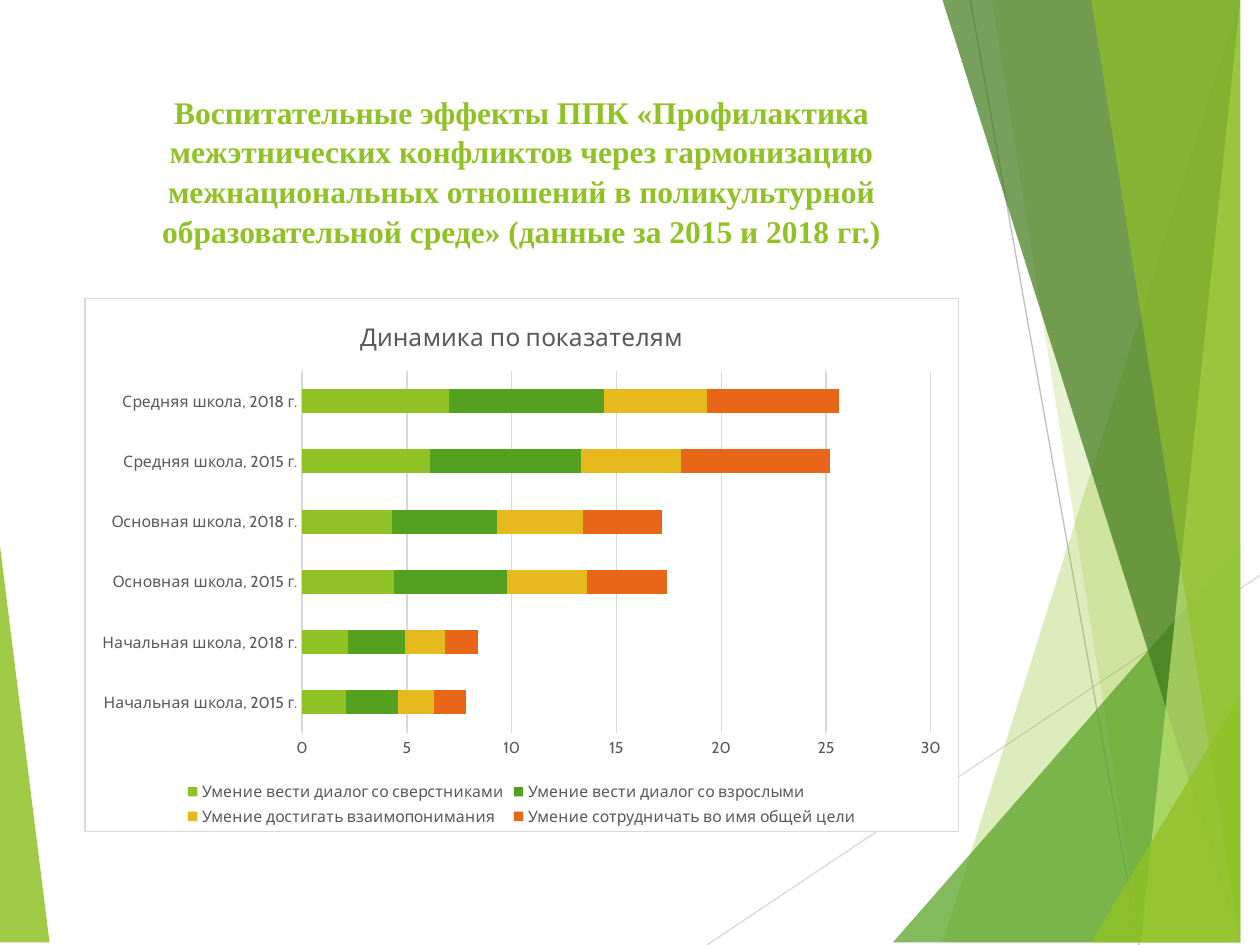
from lxml import etree
from pptx import Presentation
from pptx.chart import data
from pptx.dml.color import RGBColor
from pptx.enum import chart as ch, shapes, text
from pptx.oxml import ns, parse_xml
from pptx.util import Cm, Pt

WIDE, HIGH = 25.4, 19.05
LIME = RGBColor(0x90, 0xC2, 0x26)
GREEN = RGBColor(0x54, 0xA0, 0x21)
DARK = RGBColor(0x3F, 0x78, 0x19)
PALE = RGBColor(0xC0, 0xE4, 0x74)
GOLD = RGBColor(0xE6, 0xB9, 0x1E)
ORANGE = RGBColor(0xE7, 0x66, 0x18)
WHITE = RGBColor(0xFF, 0xFF, 0xFF)
INK = RGBColor(0x59, 0x59, 0x59)
RULE = RGBColor(0xD9, 0xD9, 0xD9)
GREY = RGBColor(0xBF, 0xBF, 0xBF)

TITLE = ("Воспитательные эффекты ППК «Профилактика межэтнических конфликтов "
         "через гармонизацию межнациональных отношений в поликультурной "
         "образовательной среде» (данные за 2015 и 2018 гг.)")
SCHOOLS = ["Начальная школа", "Основная школа", "Средняя школа"]
YEARS = [2015, 2018]
SKILLS = [
    ("Умение вести диалог со сверстниками", LIME, (2.1, 2.2, 4.4, 4.3, 6.1, 7)),
    ("Умение вести диалог со взрослыми", GREEN, (2.5, 2.7, 5.4, 5, 7.2, 7.4)),
    ("Умение достигать взаимопонимания", GOLD, (1.7, 1.9, 3.8, 4.1, 4.8, 4.9)),
    ("Умение сотрудничать во имя общей цели", ORANGE, (1.5, 1.6, 3.8, 3.8, 7.1, 6.3)),
]


def add_facet(slide, box, points, color, alpha):
    """Draw a see-through polygon; points are in cm from the box corner."""
    left, top = box[:2]
    spots = [(left + x, top + y) for x, y in points]
    pen = slide.shapes.build_freeform(*spots[0], scale=Cm(1))
    pen.add_line_segments(spots[1:], close=True)
    facet = pen.convert_to_shape()
    facet.shadow.inherit = False
    facet.line.fill.background()
    facet.fill.solid()
    facet.fill.fore_color.rgb = color
    tint = facet.fill._xPr.find(".//" + ns.qn("a:srgbClr"))
    etree.SubElement(tint, ns.qn("a:alpha"), val=str(alpha * 1000))


def add_line(slide, box, start, end, color):
    left, top = box[:2]
    line = slide.shapes.add_connector(
        shapes.MSO_CONNECTOR.STRAIGHT, Cm(left + start[0]), Cm(top + start[1]),
        Cm(left + end[0]), Cm(top + end[1]))
    line.line.color.rgb = color
    line.line.width = Pt(0.75)
    etree.SubElement(line._element.spPr, ns.qn("a:effectLst"))


def add_decor(slide, box):
    wide, high = box[2:]

    def band(top, foot, color, alpha):
        """A facet from the top edge to the foot, filled out to the right edge."""
        add_facet(slide, box, [(top, 0), (foot, high), (wide, high), (wide, 0)],
                  color, alpha)

    def wedge(foot, rise, color, alpha):
        """A triangle in the bottom right corner."""
        add_facet(slide, box, [(foot, high), (wide, rise), (wide, high)], color, alpha)

    add_facet(slide, box, [(0, 11.15), (1.24, high), (0, high)], LIME, 85)
    add_line(slide, box, (14.25, high), (wide, 11.6), RULE)
    add_line(slide, box, (19.56, 0), (22.96, high), GREY)
    band(24.77, 19.15, LIME, 30)
    band(20.02, 23.34, LIME, 20)
    wedge(18.44, 10.9, GREEN, 72)
    band(19.48, 24.64, DARK, 70)
    band(24.92, 23.04, PALE, 70)
    band(22.43, 25.04, LIME, 65)
    wedge(22.38, 13.59, LIME, 80)


def set_title(slide, box):
    title = slide.shapes.title
    title.left, title.top, title.width, title.height = map(Cm, box)
    slide.shapes._spTree.append(title._element)  # in front of the facets
    frame = title.text_frame
    frame.text = TITLE
    frame.word_wrap = True
    frame.auto_size = text.MSO_AUTO_SIZE.NONE
    frame.vertical_anchor = text.MSO_ANCHOR.TOP
    para = frame.paragraphs[0]
    para.alignment = text.PP_ALIGN.CENTER
    para.line_spacing = 1.05
    set_font(para.runs[0].font, 18, LIME, "Times New Roman", True)


def set_font(font, size, color=INK, name="Cabin", bold=False):
    font.size, font.name, font.bold = Pt(size), name, bold
    font.color.rgb = color


def set_rule(line):
    line.color.rgb = RULE
    line.width = Pt(0.75)


def set_axis(axis):
    axis.major_tick_mark = axis.minor_tick_mark = ch.XL_TICK_MARK.NONE
    set_font(axis.tick_labels.font, 9)


def set_frame(chart):
    """Give the chart area a white fill and a thin border."""
    area = parse_xml(
        f'<c:spPr {ns.nsdecls("c", "a")}>'
        f'<a:solidFill><a:srgbClr val="{WHITE}"/></a:solidFill>'
        f'<a:ln w="{Pt(0.75)}"><a:solidFill><a:srgbClr val="{RULE}"/></a:solidFill></a:ln>'
        '</c:spPr>')
    chart._chartSpace.find(ns.qn("c:chart")).addnext(area)


def add_bars(slide, box):
    table = data.CategoryChartData()
    table.categories = [f"{s}, {y} г." for s in SCHOOLS for y in YEARS]
    for name, _, vals in SKILLS:
        table.add_series(name, vals)
    chart = slide.shapes.add_chart(
        ch.XL_CHART_TYPE.BAR_STACKED, *map(Cm, box), table).chart
    set_font(chart.font, 10)
    set_frame(chart)

    chart.has_title = True
    head = chart.chart_title.text_frame
    head.text = "Динамика по показателям"
    set_font(head.paragraphs[0].runs[0].font, 14)
    chart.chart_title.include_in_layout = False

    chart.has_legend = True
    chart.legend.position = ch.XL_LEGEND_POSITION.BOTTOM
    chart.legend.include_in_layout = False
    set_font(chart.legend.font, 9)

    cats, vals = chart.category_axis, chart.value_axis
    set_axis(cats)
    set_axis(vals)
    set_rule(cats.format.line)
    vals.format.line.fill.background()
    vals.has_major_gridlines = True
    set_rule(vals.major_gridlines.format.line)
    vals.minimum_scale, vals.maximum_scale, vals.major_unit = 0, 30, 5

    plot = chart.plots[0]
    plot.gap_width, plot.overlap, plot.vary_by_categories = 150, 100, False
    for bar, (_, color, _) in zip(plot.series, SKILLS):
        bar.format.fill.solid()
        bar.format.fill.fore_color.rgb = color


def main():
    deck = Presentation()
    deck.slide_width, deck.slide_height = Cm(WIDE), Cm(HIGH)
    slide = deck.slides.add_slide(deck.slide_layouts[5])
    add_decor(slide, (0, 0, WIDE, HIGH))
    set_title(slide, (1.7, 1.7, 17.63, 3.66))
    add_bars(slide, (1.7, 6, 17.63, 10.77))
    deck.save("out.pptx")


if __name__ == "__main__":
    main()
